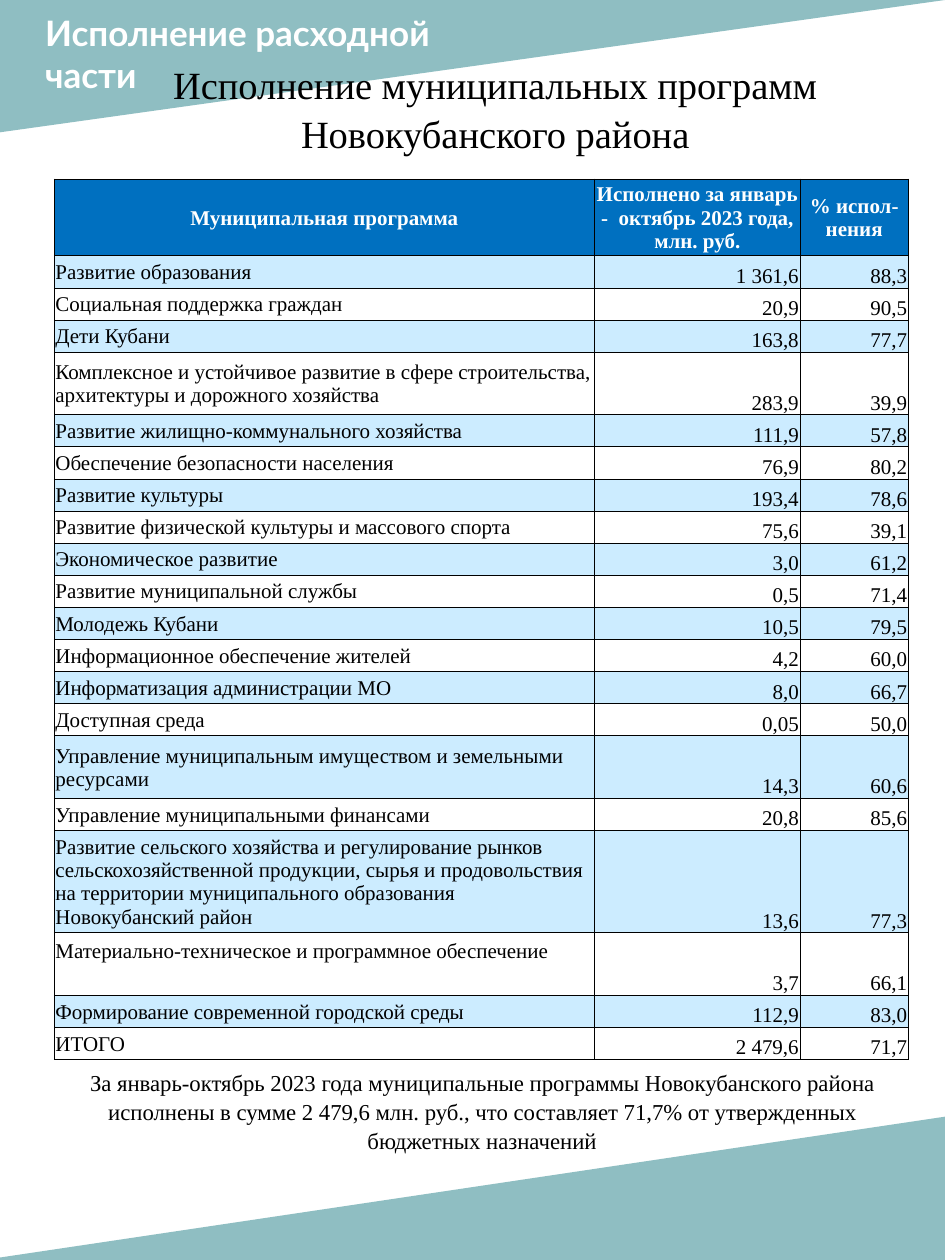
from lxml import etree
from pptx import Presentation
from pptx.dml.color import RGBColor
from pptx.enum.shapes import MSO_SHAPE
from pptx.enum.text import MSO_ANCHOR, MSO_AUTO_SIZE, PP_ALIGN
from pptx.oxml.ns import qn
from pptx.util import Inches, Pt

TOP, MIDDLE, BOTTOM = MSO_ANCHOR.TOP, MSO_ANCHOR.MIDDLE, MSO_ANCHOR.BOTTOM
LEFT, CENTER, RIGHT = PP_ALIGN.LEFT, PP_ALIGN.CENTER, PP_ALIGN.RIGHT
TRIANGLE = MSO_SHAPE.RIGHT_TRIANGLE

TEAL = RGBColor(0x51, 0x9A, 0xA0)
BLUE = RGBColor(0x00, 0x70, 0xC0)
PALE = RGBColor(0xCC, 0xEC, 0xFF)
WHITE = RGBColor(0xFF, 0xFF, 0xFF)
BLACK = RGBColor(0x00, 0x00, 0x00)
SERIF, SANS = "Times New Roman", "Lato"

HEADER = ("Муниципальная программа",
          "Исполнено за январь -  октябрь 2023 года, млн. руб.",
          "% испол-нения")
PROGRAMS = [
    ("Развитие образования", "1 361,6", "88,3"),
    ("Социальная поддержка граждан", "20,9", "90,5"),
    ("Дети Кубани", "163,8", "77,7"),
    ("Комплексное и устойчивое развитие в сфере строительства, архитектуры и дорожного хозяйства",
     "283,9", "39,9"),
    ("Развитие жилищно-коммунального хозяйства", "111,9", "57,8"),
    ("Обеспечение безопасности населения", "76,9", "80,2"),
    ("Развитие культуры", "193,4", "78,6"),
    ("Развитие физической культуры и массового спорта", "75,6", "39,1"),
    ("Экономическое развитие", "3,0", "61,2"),
    ("Развитие муниципальной службы", "0,5", "71,4"),
    ("Молодежь Кубани", "10,5", "79,5"),
    ("Информационное обеспечение жителей", "4,2", "60,0"),
    ("Информатизация администрации МО", "8,0", "66,7"),
    ("Доступная среда", "0,05", "50,0"),
    ("Управление муниципальным имуществом и земельными ресурсами", "14,3", "60,6"),
    ("Управление муниципальными финансами", "20,8", "85,6"),
    ("Развитие сельского хозяйства и регулирование рынков сельскохозяйственной продукции, "
     "сырья и продовольствия на территории муниципального образования Новокубанский район",
     "13,6", "77,3"),
    ("Материально-техническое и программное обеспечение", "3,7", "66,1"),
    ("Формирование современной городской среды", "112,9", "83,0"),
    ("ИТОГО", "2 479,6", "71,7"),
]
COL_WIDTHS = (4.29, 1.63, 0.86)
TABLE_HEIGHT = 6.99
SUPPLY_ROW = 18  # its name sits at the top of a double row
ROW_SHARES = {0: 2.37, 4: 1.95, 15: 1.95, 17: 3.18, SUPPLY_ROW: 1.95}  # other rows: 1


def add_text(tf, text, size, color, font=SERIF, bold=False, align=LEFT, spacing=None):
    """Write each line of text as a paragraph with one formatted run."""
    tf.word_wrap = True
    for i, line in enumerate(text.split("\n")):
        p = tf.paragraphs[0] if i == 0 else tf.add_paragraph()
        p.alignment = align
        if spacing:
            p.line_spacing = spacing
        r = p.add_run()
        r.text = line
        r.font.name, r.font.size, r.font.bold = font, Pt(size), bold
        r.font.color.rgb = color


def add_borders(cell):
    tc_pr = cell._tc.get_or_add_tcPr()
    for side in ("a:lnL", "a:lnR", "a:lnT", "a:lnB"):
        ln = etree.SubElement(tc_pr, qn(side), w=str(Pt(0.5)))
        fill = etree.SubElement(ln, qn("a:solidFill"))
        etree.SubElement(fill, qn("a:srgbClr"), val=str(BLACK))


prs = Presentation()
prs.slide_width, prs.slide_height = Inches(7.5), Inches(10)
s = prs.slides.add_slide(prs.slide_layouts[5])

# Translucent corner wedges
for x, y, w, h, flip in ((0, 0, 7.5, 1.05, "flipH"), (-0.13, 8.86, 7.65, 1.14, "flipV")):
    sp = s.shapes.add_shape(TRIANGLE, Inches(x), Inches(y), Inches(w), Inches(h))
    sp.shadow.inherit = False
    sp.rotation = 180
    sp._element.spPr.xfrm.set(flip, "1")
    sp.fill.solid()
    sp.fill.fore_color.rgb = TEAL
    color = sp._element.spPr.find(qn("a:solidFill"))[0]
    etree.SubElement(color, qn("a:alpha"), val="64000")
    sp.line.fill.background()

section = s.shapes.add_textbox(Inches(0.26), Inches(0.04), Inches(4.87), Inches(0.77))
add_text(section.text_frame, "Исполнение расходной\nчасти", 20, WHITE, SANS, True)

# The title lies over the wedge, so it moves to the front
title = s.shapes.title
s.shapes._spTree.append(title._element)
title.left, title.top = Inches(0.64), Inches(0.41)
title.width, title.height = Inches(6.58), Inches(0.83)
title.text_frame.auto_size = MSO_AUTO_SIZE.NONE
title.text_frame.vertical_anchor = TOP
add_text(title.text_frame, "Исполнение муниципальных программ Новокубанского района",
         22, BLACK, align=CENTER, spacing=1.06)

note = s.shapes.add_textbox(Inches(0.43), Inches(8.42), Inches(6.79), Inches(0.76))
add_text(note.text_frame,
         "За январь-октябрь 2023 года муниципальные программы Новокубанского района "
         "исполнены в сумме 2 479,6 млн. руб., что составляет 71,7% от утвержденных "
         "бюджетных назначений", 13, BLACK, align=CENTER, spacing=1.06)

rows = [HEADER] + PROGRAMS
table = s.shapes.add_table(len(rows), len(COL_WIDTHS), Inches(0.43), Inches(1.42),
                           Inches(sum(COL_WIDTHS)), Inches(TABLE_HEIGHT)).table
for column, width in zip(table.columns, COL_WIDTHS):
    column.width = Inches(width)

shares = [ROW_SHARES.get(i, 1) for i in range(len(rows))]
for i, values in enumerate(rows):
    table.rows[i].height = Inches(TABLE_HEIGHT * shares[i] / sum(shares))
    for j, value in enumerate(values):
        cell = table.cell(i, j)
        cell.margin_left = cell.margin_right = cell.margin_top = Inches(0.01)
        cell.margin_bottom = 0
        cell.vertical_anchor = MIDDLE if i == 0 or j == 0 else BOTTOM
        if i == SUPPLY_ROW and j == 0:
            cell.vertical_anchor = TOP
            cell.margin_top = Inches(0.06)
        add_borders(cell)
        cell.fill.solid()
        if i == 0:
            cell.fill.fore_color.rgb = BLUE
            add_text(cell.text_frame, value, 12, WHITE, bold=True, align=CENTER)
        else:
            cell.fill.fore_color.rgb = PALE if i % 2 else WHITE
            add_text(cell.text_frame, value, 12, BLACK, align=RIGHT if j else LEFT)

prs.save("out.pptx")
